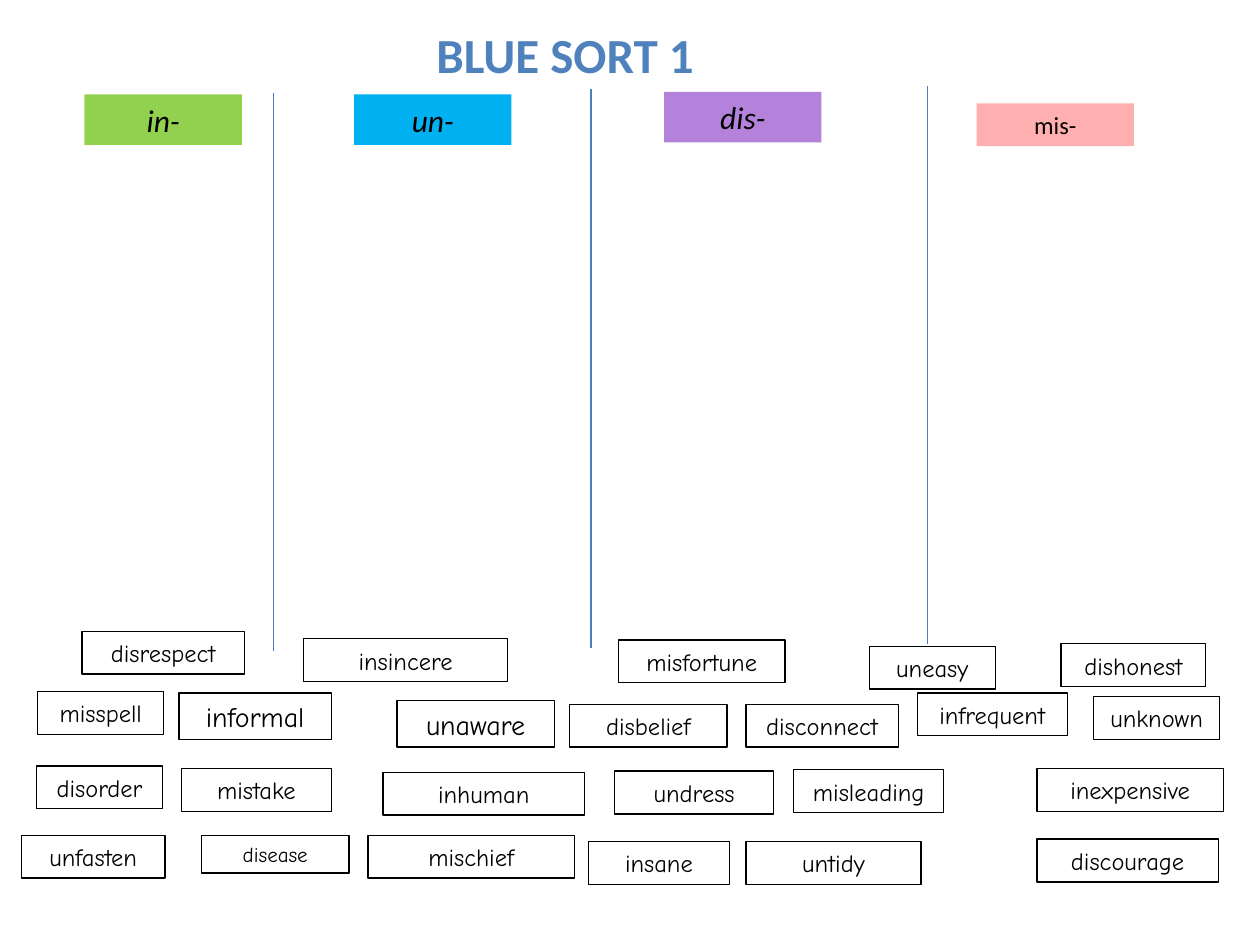
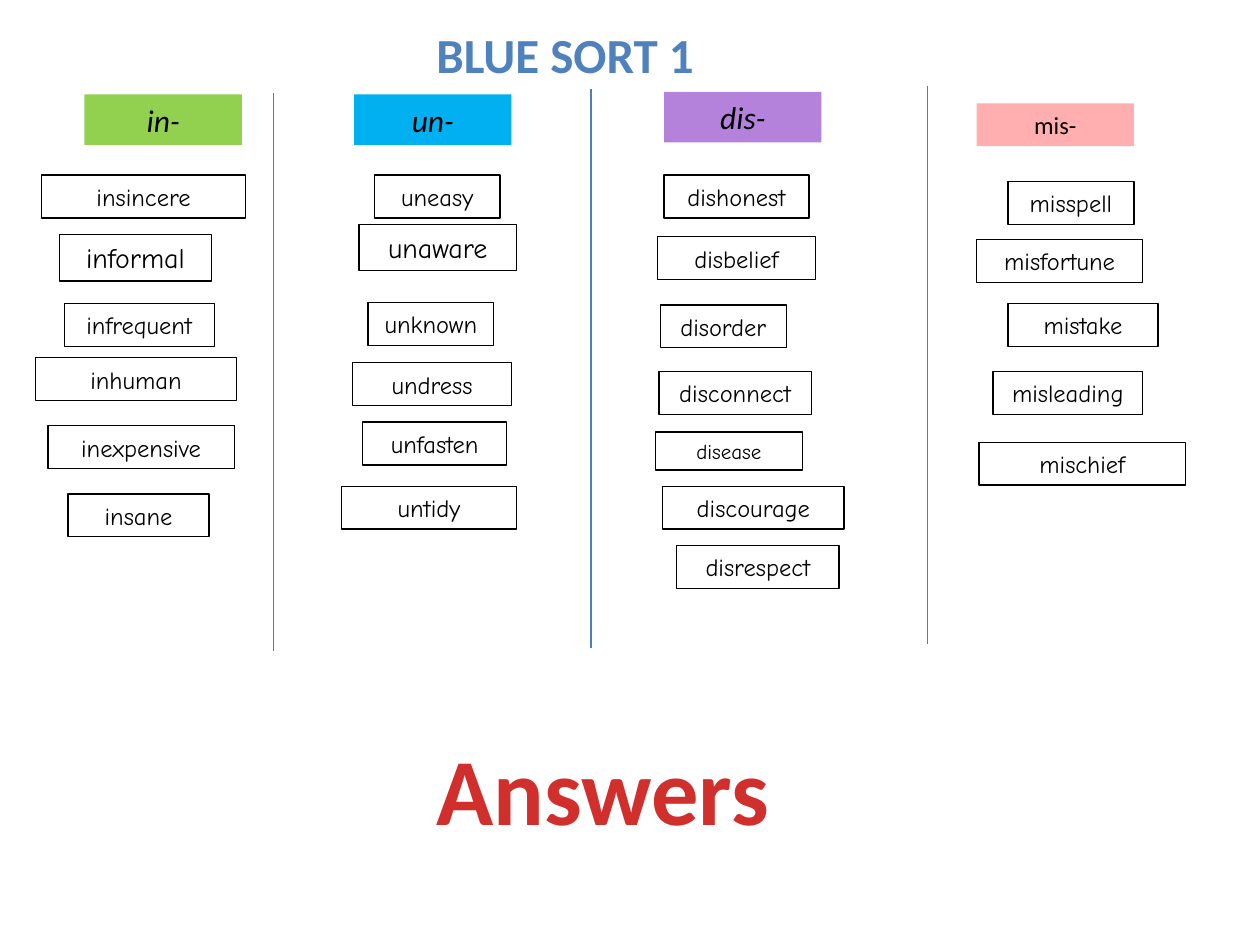
from dataclasses import dataclass, field

from lxml import etree
from pptx import Presentation
from pptx.dml.color import RGBColor
from pptx.enum.shapes import MSO_CONNECTOR, MSO_SHAPE
from pptx.enum.text import MSO_ANCHOR, MSO_AUTO_SIZE, PP_ALIGN
from pptx.oxml.ns import qn
from pptx.util import Inches, Pt

RECT = MSO_SHAPE.RECTANGLE
LINE = MSO_CONNECTOR.STRAIGHT
CENTER = PP_ALIGN.CENTER
MIDDLE = MSO_ANCHOR.MIDDLE
FIXED = MSO_AUTO_SIZE.NONE
COLS, ROWS = 100, 75
TITLE_ONLY = 5


@dataclass
class Theme:
    """Colours, fonts, type sizes and the box height for each size."""
    ink: str = "000000"
    title: str = "4F81BD"
    rule: str = "4B7EBC"
    key: str = "D02F2C"
    green: str = "92D050"
    blue: str = "00B0F0"
    plum: str = "B482DA"
    pink: str = "FFAFAF"
    head_font: str = "Calibri"
    word_font: str = "Comic Neue"
    tiny: int = 12
    base: int = 14
    large: int = 16
    head: int = 18
    top: int = 28
    huge: int = 54
    line: float = 0.75
    rows: dict = field(default_factory=lambda: {
        12: 3, 14: 3.4, 16: 3.7, 18: 4, 28: 5.7, 54: 10.1})


THEME = Theme()
HEADS = [
    ("in-", 6.7, 7.5, THEME.green, THEME.head),
    ("un-", 28.1, 7.5, THEME.blue, THEME.head),
    ("dis-", 52.7, 7.3, THEME.plum, THEME.head),
    ("mis-", 77.5, 8.2, THEME.pink, THEME.base),
]
RULES = [(21.7, 7.4), (46.9, 7.1), (73.6, 6.8)]
RULE_ROWS = 44.3
SIZES = {"informal": THEME.large, "unaware": THEME.large,
         "disease": THEME.tiny}
WORDS = [
    ("insincere", 16.2, (24.1, 50.7), (3.3, 13.9)),
    ("informal", 12.1, (14.2, 55), (4.7, 18.6)),
    ("infrequent", 11.9, (72.8, 55), (5.1, 24.1)),
    ("inhuman", 16, (30.4, 61.3), (2.8, 28.4)),
    ("inexpensive", 14.8, (82.3, 61), (3.8, 33.8)),
    ("insane", 11.2, (46.7, 66.8), (5.4, 39.2)),
    ("uneasy", 10, (69, 51.3), (29.7, 13.9)),
    ("unaware", 12.5, (31.5, 55.6), (28.5, 17.8)),
    ("unknown", 10, (86.8, 55.3), (29.2, 24)),
    ("undress", 12.6, (48.8, 61.2), (28, 28.8)),
    ("unfasten", 11.4, (1.7, 66.3), (28.8, 33.5)),
    ("untidy", 13.9, (59.2, 66.8), (27.1, 38.6)),
    ("dishonest", 11.5, (84.2, 51.1), (52.7, 13.9)),
    ("disbelief", 12.5, (45.2, 55.9), (52.2, 18.8)),
    ("disorder", 10, (2.9, 60.8), (52.4, 24.2)),
    ("disconnect", 12.1, (59.2, 55.9), (52.3, 29.5)),
    ("disease", 11.7, (16, 66.3), (52, 34.3)),
    ("discourage", 14.4, (82.3, 66.6), (52.6, 38.6)),
    ("disrespect", 12.9, (6.5, 50.1), (53.7, 43.3)),
    ("misspell", 10, (3, 54.9), (80, 14.4)),
    ("misfortune", 13.2, (49.1, 50.8), (77.5, 19)),
    ("mistake", 11.9, (14.4, 61), (80, 24.1)),
    ("misleading", 11.9, (63, 61.1), (78.8, 29.5)),
    ("mischief", 16.4, (29.2, 66.3), (77.7, 35.1)),
]


def rgb(code):
    """Turn a hex code into a colour."""
    return RGBColor.from_string(code)


def write(frame, text, font, size, color, bold=False, slant=False, wrap=True):
    """Put one centred line of text into a frame."""
    frame.auto_size = FIXED
    frame.word_wrap = wrap
    frame.vertical_anchor = MIDDLE
    line = frame.paragraphs[0]
    line.alignment = CENTER
    run = line.add_run()
    run.text = text
    run.font.name = font
    run.font.size = Pt(size)
    run.font.bold = bold
    run.font.italic = slant
    run.font.color.rgb = rgb(color)


class Deck:
    """Hold the theme and the slide in work."""

    def __init__(self, theme):
        """Open an empty deck of the right size."""
        self.theme = theme
        self.file = Presentation()
        self.file.slide_width = Inches(10)
        self.file.slide_height = Inches(7.5)
        self.slide = None

    def x(self, cols):
        """Turn grid columns into a length."""
        return round(self.file.slide_width * cols / COLS)

    def y(self, rows):
        """Turn grid rows into a length."""
        return round(self.file.slide_height * rows / ROWS)

    def area(self, left, top, width, size):
        """Give the box for one line of text of a type size."""
        return (self.x(left), self.y(top), self.x(width),
                self.y(self.theme.rows[size]))

    def page(self, title):
        """Start a slide and set its title."""
        look = self.theme
        layout = self.file.slide_layouts[TITLE_ONLY]
        self.slide = self.file.slides.add_slide(layout)
        box = self.slide.shapes.title
        box.left, box.top, box.width, box.height = self.area(
            21.8, 1.4, 46.1, look.top)
        write(box.text_frame, title, look.head_font, look.top, look.title,
              bold=True)

    def card(self, left, top, width, size, fill=None):
        """Add a filled box, or an outlined one when no fill is given."""
        box = self.slide.shapes.add_shape(
            RECT, *self.area(left, top, width, size))
        box.shadow.inherit = False
        if fill:
            box.fill.solid()
            box.fill.fore_color.rgb = rgb(fill)
            box.line.fill.background()
        else:
            box.fill.background()
            box.line.color.rgb = rgb(self.theme.ink)
            box.line.width = Pt(self.theme.line)
        return box.text_frame

    def head(self, text, left, top, fill, size):
        """Add the coloured label of a column."""
        look = self.theme
        write(self.card(left, top, 12.5, size, fill), text, look.head_font,
              size, look.ink, slant=size == look.head)

    def word(self, text, width, spot):
        """Add one word card."""
        look = self.theme
        size = SIZES.get(text, look.base)
        write(self.card(*spot, width, size), text, look.word_font, size,
              look.ink)

    def rule(self, left, top):
        """Add the line between two columns."""
        line = self.slide.shapes.add_connector(
            LINE, self.x(left), self.y(top), self.x(left),
            self.y(top + RULE_ROWS))
        line.line.color.rgb = rgb(self.theme.rule)
        line.line.width = Pt(self.theme.line)
        etree.SubElement(line._element.spPr, qn("a:effectLst"))

    def note(self, text, left, top, width):
        """Add a huge line of text."""
        look = self.theme
        box = self.slide.shapes.add_textbox(
            *self.area(left, top, width, look.huge))
        write(box.text_frame, text, look.head_font, look.huge, look.key,
              bold=True, wrap=False)

    def board(self, spots):
        """Add a slide with heads, rules and the placed words."""
        self.page("BLUE SORT 1")
        for head in HEADS:
            self.head(*head)
        for rule in RULES:
            self.rule(*rule)
        for (text, width, *_), spot in zip(WORDS, spots):
            self.word(text, width, spot)


def main():
    """Build the sort and its key."""
    deck = Deck(THEME)
    deck.board([mixed for _, _, mixed, _ in WORDS])
    deck.board([sorted_at for _, _, _, sorted_at in WORDS])
    deck.note("Answers", 33.5, 57.5, 28.7)
    deck.file.save("out.pptx")


if __name__ == "__main__":
    main()
